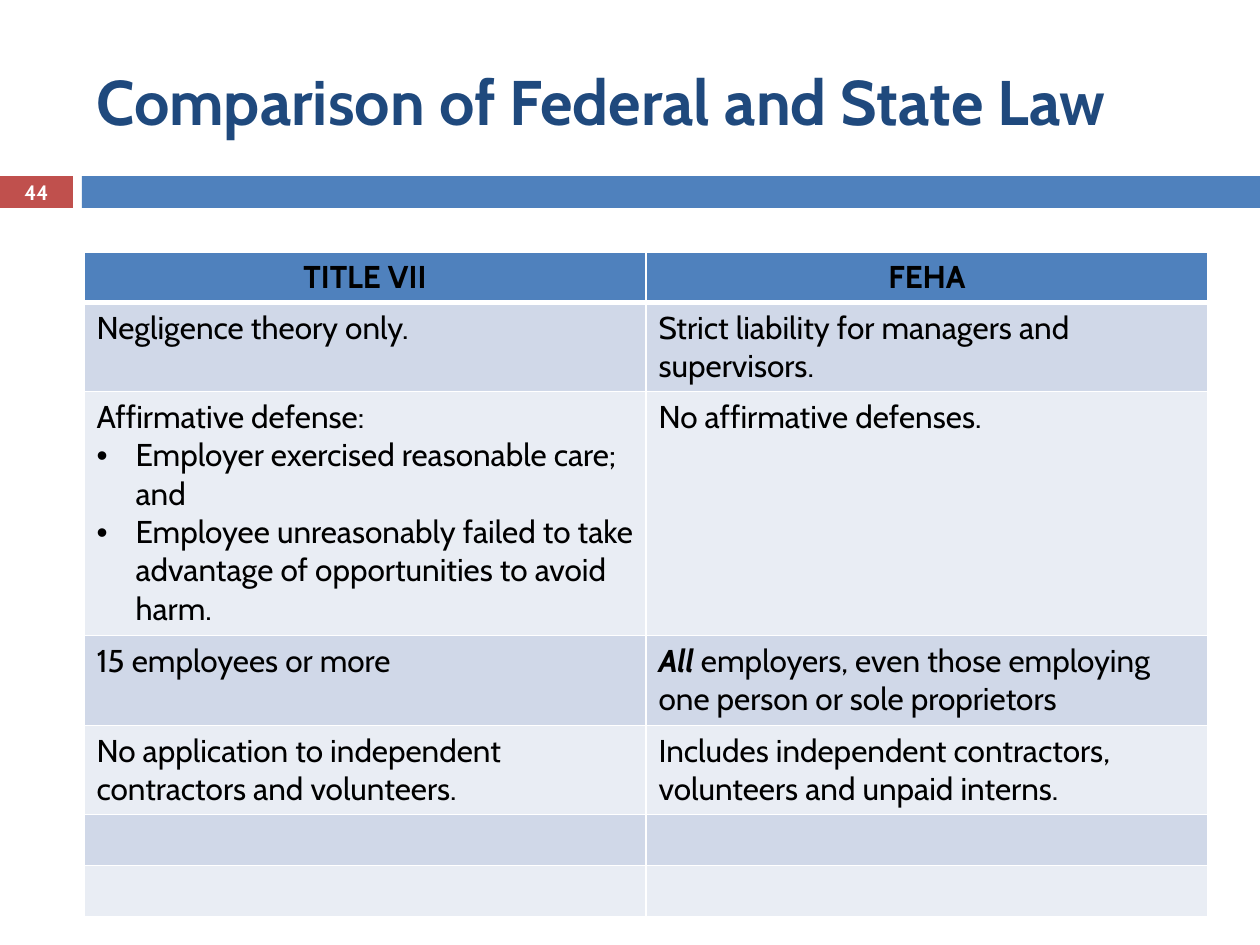
"""Build a slide comparing Title VII and FEHA in a two-column table."""
from lxml.etree import SubElement
from pptx import Presentation
from pptx.dml.color import RGBColor
from pptx.enum.shapes import MSO_SHAPE
from pptx.enum.text import MSO_ANCHOR, PP_ALIGN
from pptx.oxml.ns import qn
from pptx.util import Emu, Pt

PX = 914400 // 126 + 1 / 7
FONT = "Cabin"
C = {"red": "C0504D", "blue": "4F81BD", "navy": "1F497D", "white": "FFFFFF",
     "black": "000000", "band": "D0D8E8", "pale": "E9EDF4"}


def px(*values):
    return [Emu(round(v * PX)) for v in values]


def add_run(p, text, size, color, bold=False, italic=False):
    r = p.add_run()
    r.text = text
    r.font.name = FONT
    r.font.size = Pt(size)
    r.font.bold = bold
    r.font.italic = italic
    r.font.color.rgb = RGBColor.from_string(C[color])


prs = Presentation()
prs.slide_width, prs.slide_height = px(1260, 945)
s = prs.slides.add_slide(prs.slide_layouts[6])

for left, width, color in [(0, 73, "red"), (82, 1178, "blue")]:
    sp = s.shapes.add_shape(MSO_SHAPE.RECTANGLE, *px(left, 176, width, 32))
    sp.shadow.inherit = False
    sp.fill.solid()
    sp.fill.fore_color.rgb = RGBColor.from_string(C[color])
    sp.line.fill.background()

labels = [
    ((84, 32, 1124, 136), "Comparison of Federal and State Law", 36, "navy", PP_ALIGN.LEFT),
    ((0, 175, 73, 34), "44", 11.9, "white", PP_ALIGN.CENTER),
]
for box, text, size, color, align in labels:
    tf = s.shapes.add_textbox(*px(*box)).text_frame
    tf.word_wrap = True
    tf.vertical_anchor = MSO_ANCHOR.MIDDLE
    p = tf.paragraphs[0]
    p.alignment = align
    add_run(p, text, size, color, bold=True)

rows = [
    (50, ["TITLE VII"], ["FEHA"]),
    (89, ["Negligence theory only."], ["Strict liability for managers and supervisors."]),
    (244, ["Affirmative defense:",
           "• Employer exercised reasonable care; and",
           "• Employee unreasonably failed to take advantage of opportunities to avoid harm."],
     ["No affirmative defenses."]),
    (90, ["15 employees or more"],
     ["*All *employers, even those employing one person or sole proprietors"]),
    (89, ["No application to independent contractors and volunteers."],
     ["Includes independent contractors, volunteers and unpaid interns."]),
    (51, [], []),
    (51, [], []),
]
height = sum(row[0] for row in rows)
tbl = s.shapes.add_table(len(rows), 2, *px(84, 252, 1124, height)).table
indent = px(39)[0]

for i, (row_height, *cells) in enumerate(rows):
    tbl.rows[i].height = px(row_height)[0]
    fill = "blue" if i == 0 else ("band" if i % 2 else "pale")
    for j, texts in enumerate(cells):
        cell = tbl.cell(i, j)
        tcPr = cell._tc.get_or_add_tcPr()
        for side in "LRTB":
            thick = (i, side) in [(0, "B"), (1, "T")]
            ln = SubElement(tcPr, qn(f"a:ln{side}"), w=str(Pt(3 if thick else 1)))
            SubElement(SubElement(ln, qn("a:solidFill")), qn("a:srgbClr"), val=C["white"])
        cell.fill.solid()
        cell.fill.fore_color.rgb = RGBColor.from_string(C[fill])
        tf = cell.text_frame
        for k, text in enumerate(texts):
            p = tf.add_paragraph() if k else tf.paragraphs[0]
            p.alignment = PP_ALIGN.LEFT if i else PP_ALIGN.CENTER
            if text.startswith("• "):
                pPr = p._p.get_or_add_pPr()
                pPr.set("marL", str(indent))
                pPr.set("indent", str(-indent))
                SubElement(pPr, qn("a:buFont"), typeface="Arial")
                SubElement(pPr, qn("a:buChar"), char="•")
            for n, part in enumerate(text.removeprefix("• ").split("*")):
                if part:
                    strong = n % 2 == 1
                    add_run(p, part, 18, "black", bold=strong or i == 0, italic=strong)

prs.save("out.pptx")
